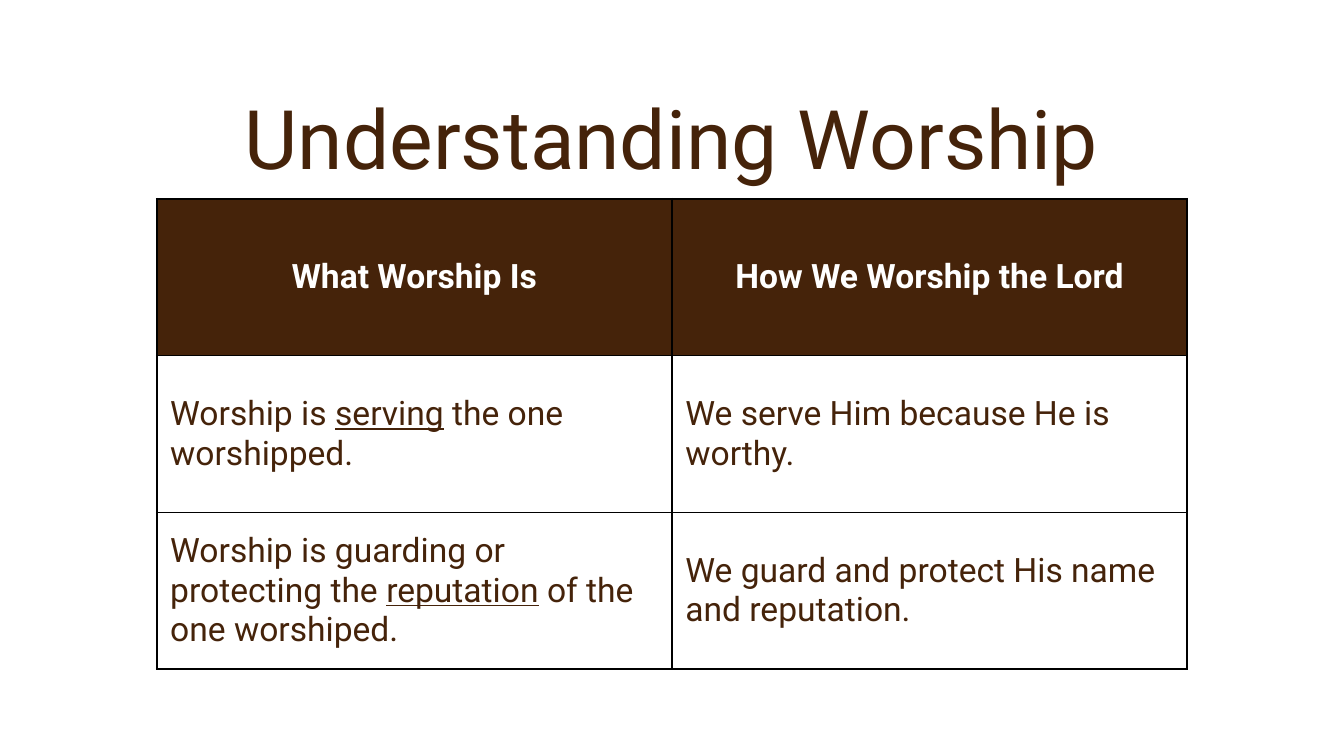
from typing import NamedTuple

from lxml import etree
from pptx import Presentation
from pptx.dml.color import RGBColor
from pptx.enum.text import MSO_ANCHOR, MSO_AUTO_SIZE, PP_ALIGN
from pptx.oxml.ns import qn
from pptx.util import Pt

MIDDLE = MSO_ANCHOR.MIDDLE
NO_AUTOFIT = MSO_AUTO_SIZE.NONE
CENTER = PP_ALIGN.CENTER
LEFT = PP_ALIGN.LEFT

TITLE_ONLY_LAYOUT = 5
FONT = "Roboto"
COLORS = {"brown": "45230A", "white": "FFFFFF", "black": "000000"}
COLUMN_WIDTH = 276
ROW_HEIGHT = 84
OUTER_BORDER = 1
ROW_BORDER = 0.5


class Run(NamedTuple):
    text: str
    underline: bool = False


HEADINGS = ["What Worship Is", "How We Worship the Lord"]
STATEMENTS = [
    [
        [Run("Worship is "), Run("serving", True), Run(" the one worshipped.")],
        [Run("We serve Him because He is worthy.")],
    ],
    [
        [
            Run("Worship is guarding or protecting the "),
            Run("reputation", True),
            Run(" of the one worshiped."),
        ],
        [Run("We guard and protect His name and reputation.")],
    ],
]


def write_text(text_frame, runs: list[Run], *, size: float, color: str,
               bold: bool = False, align=LEFT, line_spacing: float = 1.0) -> None:
    paragraph = text_frame.paragraphs[0]
    paragraph.alignment = align
    paragraph.line_spacing = line_spacing
    for part in runs:
        run = paragraph.add_run()
        run.text = part.text
        run.font.name = FONT
        run.font.size = Pt(size)
        run.font.bold = bold
        run.font.underline = part.underline
        run.font.color.rgb = RGBColor.from_string(COLORS[color])


def add_border(cell, side: str, width: float) -> None:
    properties = cell._tc.get_or_add_tcPr()
    line = etree.SubElement(properties, qn(f"a:ln{side}"), w=str(Pt(width)))
    fill = etree.SubElement(line, qn("a:solidFill"))
    etree.SubElement(fill, qn("a:srgbClr"), val=COLORS["black"])


def format_cell(cell, row: int, last_row: int) -> None:
    cell.vertical_anchor = MIDDLE
    widths = {
        "L": OUTER_BORDER,
        "R": OUTER_BORDER,
        "T": OUTER_BORDER if row == 0 else ROW_BORDER,
        "B": OUTER_BORDER if row == last_row else ROW_BORDER,
    }
    for side, width in widths.items():
        add_border(cell, side, width)
    cell.fill.solid()
    fill_color = COLORS["brown" if row == 0 else "white"]
    cell.fill.fore_color.rgb = RGBColor.from_string(fill_color)


def add_title(slide, text: str) -> None:
    title = slide.shapes.title
    title.left, title.top = Pt(36), Pt(34.5)
    title.width, title.height = Pt(648), Pt(84)
    title.text_frame.word_wrap = True
    title.text_frame.auto_size = NO_AUTOFIT
    title.text_frame.vertical_anchor = MIDDLE
    write_text(title.text_frame, [Run(text)], size=44, color="brown",
               align=CENTER, line_spacing=0.9)


def add_worship_table(slide) -> None:
    rows = [[[Run(heading)] for heading in HEADINGS]] + STATEMENTS
    row_count, column_count = len(rows), len(HEADINGS)
    table = slide.shapes.add_table(
        row_count, column_count, Pt(84), Pt(106.5),
        Pt(COLUMN_WIDTH * column_count), Pt(ROW_HEIGHT * row_count),
    ).table
    for row, cells in enumerate(rows):
        for column, runs in enumerate(cells):
            cell = table.cell(row, column)
            format_cell(cell, row, row_count - 1)
            is_heading = row == 0
            write_text(cell.text_frame, runs, size=18, bold=is_heading,
                       color="white" if is_heading else "brown",
                       align=CENTER if is_heading else LEFT)


def main() -> None:
    presentation = Presentation()
    presentation.slide_width, presentation.slide_height = Pt(720), Pt(405)
    layout = presentation.slide_layouts[TITLE_ONLY_LAYOUT]
    slide = presentation.slides.add_slide(layout)
    add_title(slide, "Understanding Worship")
    add_worship_table(slide)
    presentation.save("out.pptx")


if __name__ == "__main__":
    main()
